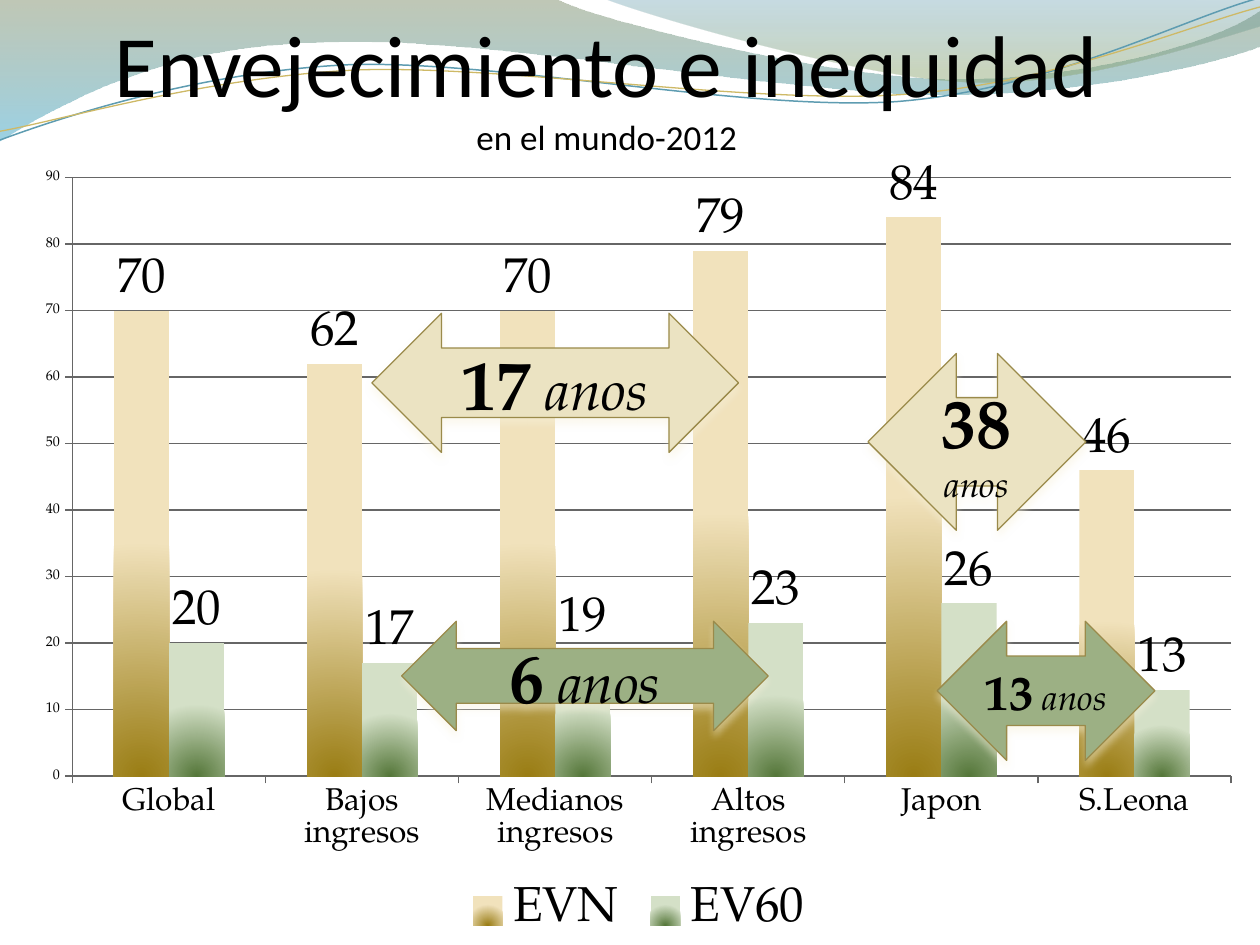
"""Build the slide on ageing and inequality: a clustered column chart with gap arrows."""
from dataclasses import dataclass
from math import cos, radians, sin
from typing import NamedTuple

from lxml import etree
from pptx import Presentation
from pptx.chart.data import CategoryChartData
from pptx.dml.color import RGBColor
from pptx.enum.chart import XL_CHART_TYPE, XL_LABEL_POSITION, XL_LEGEND_POSITION, XL_TICK_MARK
from pptx.enum.shapes import MSO_SHAPE
from pptx.enum.text import MSO_ANCHOR, PP_ALIGN
from pptx.oxml import parse_xml
from pptx.oxml.ns import nsdecls, qn
from pptx.util import Pt

COLUMNS = XL_CHART_TYPE.COLUMN_CLUSTERED
LABEL_ABOVE = XL_LABEL_POSITION.OUTSIDE_END
LEGEND_BELOW = XL_LEGEND_POSITION.BOTTOM
TICK_OUT = XL_TICK_MARK.OUTSIDE
GAP_ARROW = MSO_SHAPE.LEFT_RIGHT_ARROW
MIDDLE, BOTTOM = MSO_ANCHOR.MIDDLE, MSO_ANCHOR.BOTTOM
CENTER = PP_ALIGN.CENTER

TITLE_FONT, BODY_FONT = "Calibri", "TeX Gyre Pagella"
BLACK = RGBColor(0x00, 0x00, 0x00)
GRID_GRAY = RGBColor(0x66, 0x66, 0x66)
OLIVE = RGBColor(0x74, 0x85, 0x5E)
SKY = RGBColor(0x4A, 0xAC, 0xCE)
TEAL = RGBColor(0x45, 0x88, 0x9F)
MOSS = RGBColor(0x8A, 0xA3, 0x6D)
BLUE = RGBColor(0x5E, 0x9C, 0xB1)
GOLD = RGBColor(0xCE, 0xB9, 0x66)
GOLD_DARK = RGBColor(0x9A, 0x7D, 0x14)
GOLD_LIGHT = RGBColor(0xF1, 0xE2, 0xBC)
GREEN_DARK = RGBColor(0x55, 0x77, 0x3A)
GREEN_LIGHT = RGBColor(0xD4, 0xE0, 0xC7)
SAND = RGBColor(0xEB, 0xE3, 0xC2)
SAGE = RGBColor(0x9C, 0xB0, 0x84)
ARROW_EDGE = RGBColor(0x9A, 0x8A, 0x4A)
ARROW_SHADOW = RGBColor(0xF8, 0xF2, 0xDC)

DOWNWARD = '<a:lin ang="5400000" scaled="0"/>'
FROM_BASE = '<a:path path="circle"><a:fillToRect l="50000" t="100000" r="50000"/></a:path>'
WAVE_TILT = -2.7
WAVE_PIVOT = (359.5, 42)
CHART_WIDTH, CHART_HEIGHT = 706, 451.5


class Stop(NamedTuple):
    position: int
    color: RGBColor
    opacity: int = 100


@dataclass
class Ribbon:
    start: tuple
    segments: list
    stops: list


@dataclass
class Wave:
    start: tuple
    segments: list
    color: RGBColor
    width: float


@dataclass
class Indicator:
    name: str
    values: tuple
    stops: list


@dataclass
class Gap:
    left: float
    top: float
    width: float
    height: float
    fill: RGBColor
    years: str
    years_size: int
    space_size: int
    unit_size: int


RIBBONS = [
    Ribbon((0, -1), [(317, -1), (343, 12, 478, 45, 546, 45), (614, 45, 690, 27, 720, 6),
                     (721, 26), (708, 32, 626, 55, 537, 54), (448, 54, 275, 20, 185, 24),
                     (93, 25, 33, 60, -1, 81)],
           [Stop(0, OLIVE, 45), Stop(100, SKY, 55)]),
    Ribbon((345, -1), [(367, 8, 491, 45, 554, 47), (616, 50, 692, 23, 720, 15), (720, 0)],
           [Stop(0, TEAL, 30), Stop(80, MOSS, 45)]),
]
WAVES = [
    Wave((0, 80), [(35, 67, 114, 41, 199, 37), (284, 34, 427, 64, 513, 58),
                   (600, 51, 675, 11, 719, -1)], BLUE, 0.85),
    Wave((0, 75), [(34, 69, 118, 44, 204, 40), (289, 37, 430, 60, 516, 54),
                   (602, 48, 678, 15, 720, 4)], GOLD, 0.75),
]
REGIONS = ["Global", "Bajos ingresos", "Medianos ingresos", "Altos ingresos", "Japon", "S.Leona"]
INDICATORS = [
    Indicator("EVN", (70, 62, 70, 79, 84, 46), [Stop(0, GOLD_DARK), Stop(100, GOLD_LIGHT)]),
    Indicator("EV60", (20, 17, 19, 23, 26, 13), [Stop(0, GREEN_DARK), Stop(100, GREEN_LIGHT)]),
]
GAPS = [
    Gap(212.5, 179, 209.5, 79.5, SAND, "17", 40, 32, 32),
    Gap(496, 202, 124.5, 101, SAND, "38", 40, 32, 20),
    Gap(229.5, 355, 209.5, 62.5, SAGE, "6", 40, 32, 32),
    Gap(535.5, 355, 124.5, 79.5, SAGE, "13", 28, 20, 20),
]


def replace_with_gradient(solid_fill, stops: list, direction: str) -> None:
    """Swap a solid fill element for a gradient."""
    marks = "".join(
        f'<a:gs pos="{stop.position * 1000}"><a:srgbClr val="{stop.color}">'
        f'<a:alpha val="{stop.opacity * 1000}"/></a:srgbClr></a:gs>' for stop in stops)
    gradient = parse_xml(f'<a:gradFill {nsdecls("a")} rotWithShape="1">'
                         f'<a:gsLst>{marks}</a:gsLst>{direction}</a:gradFill>')
    solid_fill.getparent().replace(solid_fill, gradient)


def turn(point: tuple, degrees: float) -> tuple:
    """Rotate a point clockwise about the pivot of the waves."""
    angle = radians(degrees)
    x, y = point[0] - WAVE_PIVOT[0], point[1] - WAVE_PIVOT[1]
    return (WAVE_PIVOT[0] + x * cos(angle) - y * sin(angle),
            WAVE_PIVOT[1] + x * sin(angle) + y * cos(angle))


def draw_outline(slide, start: tuple, segments: list, close: bool, tilt: float = 0):
    """Draw straight (x, y) and cubic (six-number) segments as one tilted freeform."""
    corners = [start] + [pair for segment in segments for pair in zip(segment[::2], segment[1::2])]
    first, *others = [tuple(Pt(value) for value in turn(corner, -tilt)) for corner in corners]
    builder = slide.shapes.build_freeform(*first)
    builder.add_line_segments(others, close=close)
    outline = builder.convert_to_shape()
    outline.shadow.inherit = False
    outline.rotation = tilt
    steps = iter(outline.element.findall(".//" + qn("a:lnTo")))
    for segment in segments:
        step = next(steps)
        if len(segment) == 6:
            step.addprevious(curve := etree.Element(qn("a:cubicBezTo")))
            for part in (step, next(steps), next(steps)):
                curve.append(part[0])
                part.getparent().remove(part)
    return outline


def draw_ribbon(slide, ribbon: Ribbon) -> None:
    """Draw a translucent gradient band."""
    band = draw_outline(slide, ribbon.start, ribbon.segments, True)
    band.line.fill.background()
    band.fill.solid()
    replace_with_gradient(band.element.spPr.find(qn("a:solidFill")), ribbon.stops, DOWNWARD)


def draw_wave(slide, wave: Wave) -> None:
    """Draw a thin curved line."""
    curve = draw_outline(slide, wave.start, wave.segments, False, WAVE_TILT)
    curve.fill.background()
    curve.line.color.rgb = wave.color
    curve.line.width = Pt(wave.width)


def add_run(paragraph, text: str, size: float, face: str, bold=False, italic=False) -> None:
    """Append one black run."""
    run = paragraph.add_run()
    run.text = text
    font = run.font
    font.size, font.name, font.bold, font.italic = Pt(size), face, bold, italic
    font.color.rgb = BLACK


def draw_title(slide) -> None:
    """Write the heading and its smaller second line."""
    frame = slide.shapes.add_textbox(Pt(31), Pt(0), Pt(654), Pt(90)).text_frame
    frame.word_wrap = True
    frame.vertical_anchor = BOTTOM
    frame.margin_left = frame.margin_right = frame.margin_bottom = Pt(0)
    heading, subheading = frame.paragraphs[0], frame.add_paragraph()
    heading.alignment = subheading.alignment = CENTER
    heading.font.size = Pt(50)
    heading.runs or add_run(heading, "Envejecimiento e inequidad", 50, TITLE_FONT)
    heading.runs[0].font.language_id = None
    heading_properties = frame.paragraphs[0].runs[0].font and heading.alignment
    heading.alignment = heading_properties
    frame.paragraphs[0].line_spacing = 1.0
    slide.shapes[-1].element.find(".//" + qn("a:pPr")).set("marR", str(Pt(22.5)))
    add_run(subheading, "en el mundo-2012", 20, TITLE_FONT)


def place_plot(chart, x: float, y: float, w: float, h: float) -> None:
    """Fix the inner plot area, given in points within the chart."""
    area = chart.element.find(".//" + qn("c:plotArea"))
    for layout in area.findall(qn("c:layout")):
        area.remove(layout)
    layout = etree.Element(qn("c:layout"))
    manual = etree.SubElement(layout, qn("c:manualLayout"))
    settings = {"layoutTarget": "inner", "xMode": "edge", "yMode": "edge",
                "x": x / CHART_WIDTH, "y": y / CHART_HEIGHT,
                "w": w / CHART_WIDTH, "h": h / CHART_HEIGHT}
    for key, value in settings.items():
        etree.SubElement(manual, qn(f"c:{key}")).set("val", str(value))
    area.insert(0, layout)


def draw_chart(slide) -> None:
    """Draw life expectancy at birth and at 60 by region."""
    data = CategoryChartData()
    data.categories = REGIONS
    for indicator in INDICATORS:
        data.add_series(indicator.name, indicator.values)
    chart = slide.shapes.add_chart(COLUMNS, Pt(12), Pt(88.5), Pt(CHART_WIDTH),
                                   Pt(CHART_HEIGHT), data).chart
    chart.has_title = False
    chart.font.name, chart.font.size = BODY_FONT, Pt(18)
    chart.font.color.rgb = BLACK
    chart.has_legend = True
    chart.legend.position = LEGEND_BELOW
    chart.legend.include_in_layout = False
    chart.legend.font.size = Pt(28)
    scale = chart.value_axis
    scale.minimum_scale, scale.maximum_scale, scale.major_unit = 0, 90, 10
    scale.tick_labels.font.size = Pt(8)
    scale.major_gridlines.format.line.color.rgb = GRID_GRAY
    for axis in (scale, chart.category_axis):
        axis.major_tick_mark = TICK_OUT
        axis.format.line.color.rgb = GRID_GRAY
    plot = chart.plots[0]
    plot.gap_width, plot.overlap, plot.vary_by_categories = 150, 0, False
    for series in plot.series:
        series.format.fill.solid()
        labels = series.data_labels
        labels.show_value, labels.position = True, LABEL_ABOVE
        labels.font.size = Pt(28)
    fills = chart.element.xpath(".//c:ser/c:spPr/a:solidFill")
    for fill, indicator in zip(fills, INDICATORS):
        replace_with_gradient(fill, indicator.stops, FROM_BASE)
    place_plot(chart, 29.5, 13, 662, 342)


def draw_gap(slide, gap: Gap) -> None:
    """Draw a double arrow naming the gap in years."""
    arrow = slide.shapes.add_shape(GAP_ARROW, Pt(gap.left), Pt(gap.top),
                                   Pt(gap.width), Pt(gap.height))
    arrow.fill.solid()
    arrow.fill.fore_color.rgb = gap.fill
    arrow.line.color.rgb = ARROW_EDGE
    arrow.line.width = Pt(0.75)
    arrow.shadow.inherit = False
    arrow.element.spPr.find(qn("a:effectLst")).append(parse_xml(
        f'<a:outerShdw {nsdecls("a")} blurRad="{Pt(4.5)}" dist="{Pt(3)}" dir="5400000" '
        f'rotWithShape="0"><a:srgbClr val="{ARROW_SHADOW}"><a:alpha val="48000"/>'
        '</a:srgbClr></a:outerShdw>'))
    frame = arrow.text_frame
    frame.word_wrap = True
    frame.vertical_anchor = MIDDLE
    caption = frame.paragraphs[0]
    caption.alignment = CENTER
    add_run(caption, gap.years, gap.years_size, BODY_FONT, bold=True)
    add_run(caption, " ", gap.space_size, BODY_FONT, bold=True)
    add_run(caption, "anos", gap.unit_size, BODY_FONT, italic=True)


def main() -> None:
    """Assemble and save the slide."""
    deck = Presentation()
    deck.slide_width, deck.slide_height = Pt(720), Pt(540)
    slide = deck.slides.add_slide(deck.slide_layouts[6])
    for ribbon in RIBBONS:
        draw_ribbon(slide, ribbon)
    for wave in WAVES:
        draw_wave(slide, wave)
    draw_title(slide)
    draw_chart(slide)
    for gap in GAPS:
        draw_gap(slide, gap)
    deck.save("out.pptx")


if __name__ == "__main__":
    main()
